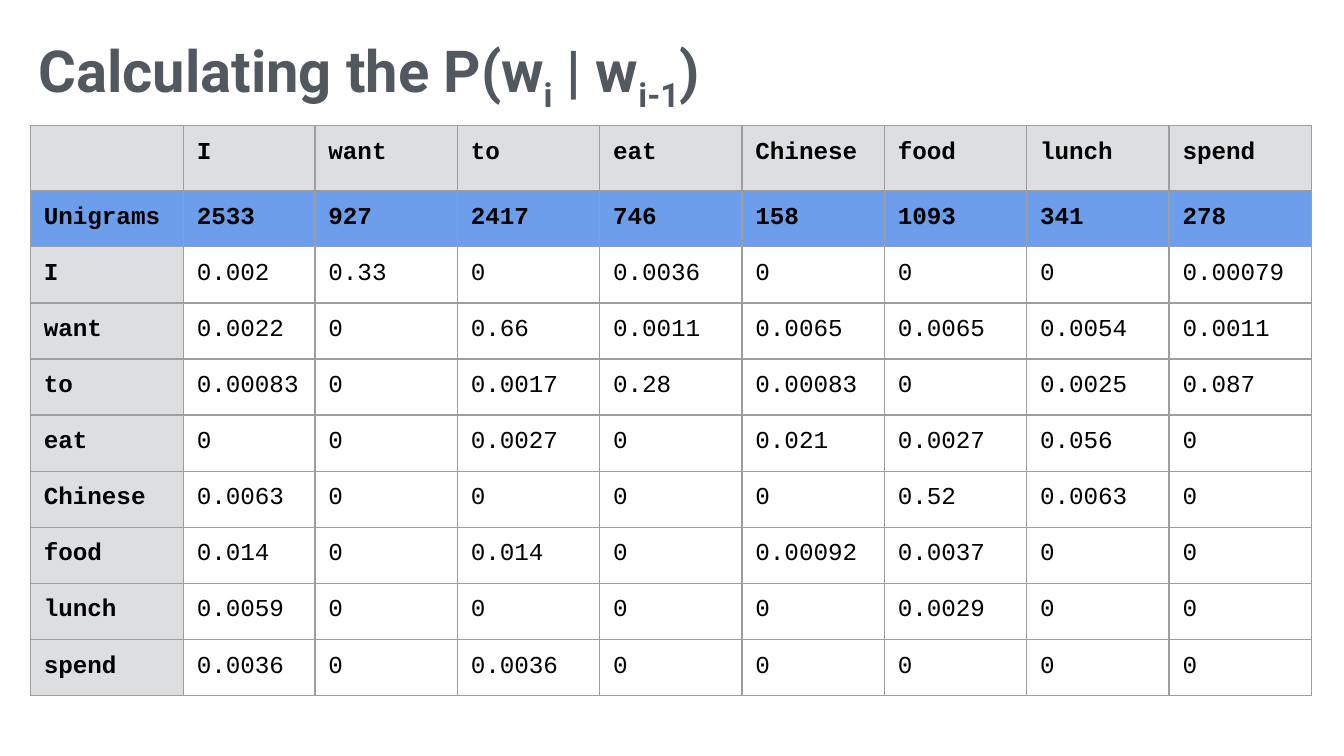
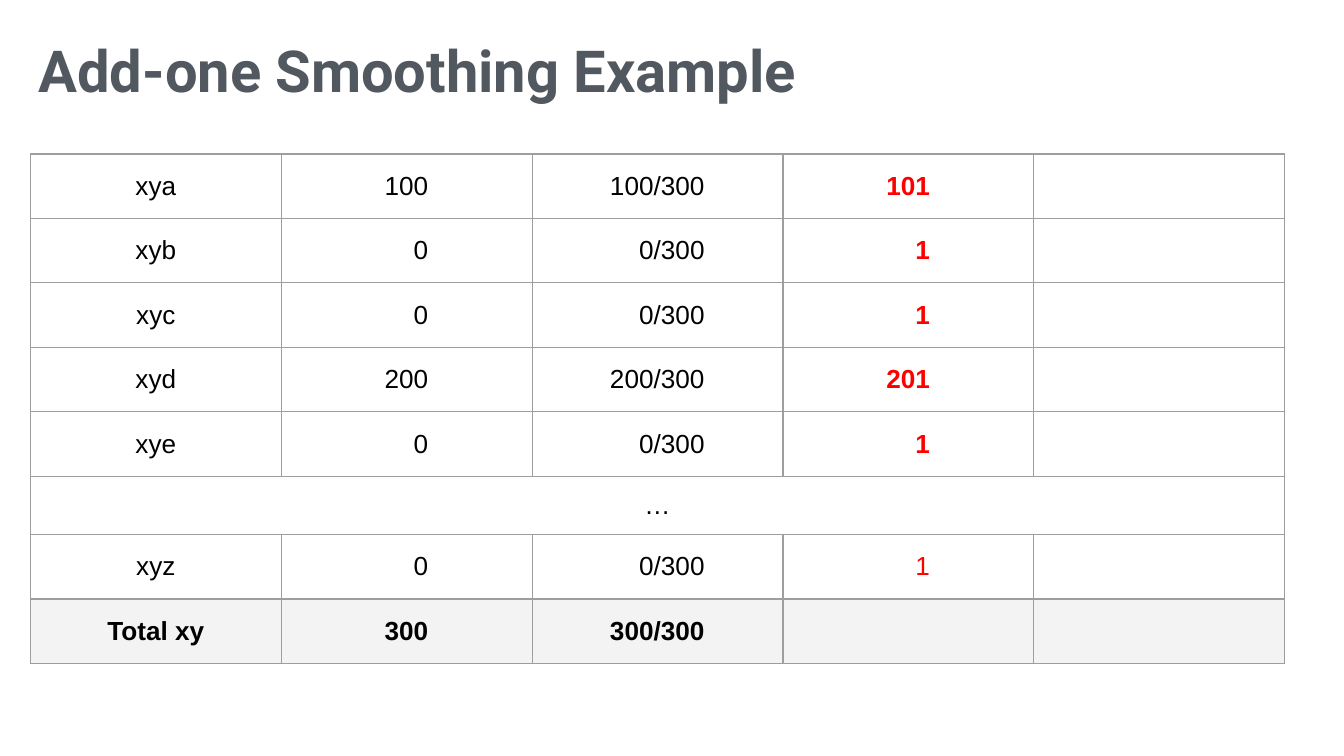
from lxml.etree import SubElement
from pptx import Presentation
from pptx.dml.color import RGBColor
from pptx.enum.text import MSO_ANCHOR, PP_ALIGN
from pptx.oxml.ns import qn
from pptx.util import Pt

SLATE, BLACK, RED = "525860", "000000", "FF0000"
GRAY, BLUE, PALE, RULE = "DCDEE0", "6D9EEB", "F3F3F3", "9E9E9E"
LEFT = 16.3
PAD = 7.2

WORDS = ["I", "want", "to", "eat", "Chinese", "food", "lunch", "spend"]
COUNTS = ["2533", "927", "2417", "746", "158", "1093", "341", "278"]
PROBS = [
    ["0.002", "0.33", "0", "0.0036", "0", "0", "0", "0.00079"],
    ["0.0022", "0", "0.66", "0.0011", "0.0065", "0.0065", "0.0054", "0.0011"],
    ["0.00083", "0", "0.0017", "0.28", "0.00083", "0", "0.0025", "0.087"],
    ["0", "0", "0.0027", "0", "0.021", "0.0027", "0.056", "0"],
    ["0.0063", "0", "0", "0", "0", "0.52", "0.0063", "0"],
    ["0.014", "0", "0.014", "0", "0.00092", "0.0037", "0", "0"],
    ["0.0059", "0", "0", "0", "0", "0.0029", "0", "0"],
    ["0.0036", "0", "0.0036", "0", "0", "0", "0", "0"],
]
SMOOTH = [
    ["xya", "100", "100/300", "101", ""],
    ["xyb", "0", "0/300", "1", ""],
    ["xyc", "0", "0/300", "1", ""],
    ["xyd", "200", "200/300", "201", ""],
    ["xye", "0", "0/300", "1", ""],
    ["…", "", "", "", ""],
    ["xyz", "0", "0/300", "1", ""],
    ["Total xy", "300", "300/300", "", ""],
]
GAP, LAST, TOTAL = 5, 6, 7
RIGHT = {1: 55.7, 2: 42, 3: 55.7}


def paint(color, code):
    color.rgb = RGBColor.from_string(code)


def style(run, face, size, code, bold):
    run.font.name = face
    run.font.size = Pt(size)
    run.font.bold = bold
    paint(run.font.color, code)


def add_title(slide, parts):
    box = slide.shapes.add_textbox(Pt(LEFT), Pt(14.4), Pt(686), Pt(35.3))
    frame = box.text_frame
    frame.word_wrap = True
    frame.margin_left = frame.margin_right = Pt(4.3)
    frame.margin_top = frame.margin_bottom = Pt(4.3)
    for text, low in parts:
        run = frame.paragraphs[0].add_run()
        run.text = text
        style(run, "Roboto", 31, SLATE, True)
        if low:
            run.font._element.set("baseline", "-25000")


def add_grid(slide, top, widths, heights):
    shape = slide.shapes.add_table(
        len(heights), len(widths), Pt(LEFT), Pt(top),
        Pt(sum(widths)), Pt(sum(heights)))
    table = shape.table
    table.first_row = table.horz_banding = False
    for col, width in zip(table.columns, widths):
        col.width = Pt(width)
    for row, height in zip(table.rows, heights):
        row.height = Pt(height)
    return table


def add_rules(cell):
    props = cell._tc.get_or_add_tcPr()
    for side in ("lnL", "lnR", "lnT", "lnB"):
        line = SubElement(props, qn("a:" + side), w=str(Pt(0.75)))
        fill = SubElement(line, qn("a:solidFill"))
        SubElement(fill, qn("a:srgbClr"), val=RULE)


def fill_cell(cell, text, face, size, code=BLACK, bold=False, fill=None):
    cell.margin_left = cell.margin_right = Pt(PAD)
    cell.margin_top = cell.margin_bottom = Pt(PAD)
    add_rules(cell)
    if fill:
        cell.fill.solid()
        paint(cell.fill.fore_color, fill)
    else:
        cell.fill.background()
    para = cell.text_frame.paragraphs[0]
    if text:
        para.text = text
        style(para.runs[0], face, size, code, bold)
    else:
        SubElement(para._p, qn("a:endParaRPr"), sz=str(size * 100))


def add_probs(slide):
    rows = [[""] + WORDS, ["Unigrams"] + COUNTS]
    rows += [[word] + probs for word, probs in zip(WORDS, PROBS)]
    table = add_grid(slide, 67.4, [82, 70.5] + [76.28] * 7,
                     [34.8, 28.9] + [29.92] * len(WORDS))
    for r, row in enumerate(rows):
        for c, text in enumerate(row):
            head = r < 2 or c == 0
            fill = BLUE if r == 1 else GRAY if head else None
            fill_cell(table.cell(r, c), text, "Courier New", 13,
                      bold=head, fill=fill)


def add_smooth(slide):
    heights = [30 if r == GAP else 34.55 for r in range(len(SMOOTH))]
    table = add_grid(slide, 82.5, [134.4] * 5, heights)
    for r, row in enumerate(SMOOTH):
        for c, text in enumerate(row):
            cell = table.cell(r, c)
            red = c == 3
            fill_cell(cell, text, "Arial", 14, RED if red else BLACK,
                      r == TOTAL or red and r != LAST,
                      PALE if r == TOTAL else None)
            cell.vertical_anchor = MSO_ANCHOR.MIDDLE
            para = cell.text_frame.paragraphs[0]
            if c in RIGHT and r != GAP:
                para.alignment = PP_ALIGN.RIGHT
                cell.margin_right = Pt(RIGHT[c])
            else:
                para.alignment = PP_ALIGN.CENTER
    table.cell(GAP, 0).merge(table.cell(GAP, 4))


def main():
    deck = Presentation()
    deck.slide_width, deck.slide_height = Pt(720), Pt(405)
    blank = deck.slide_layouts[6]

    slide = deck.slides.add_slide(blank)
    add_title(slide, [("Calculating the P(w", False), ("i", True),
                      (" | w", False), ("i-1", True), (")", False)])
    add_probs(slide)

    slide = deck.slides.add_slide(blank)
    add_title(slide, [("Add-one Smoothing Example", False)])
    add_smooth(slide)

    deck.save("out.pptx")


if __name__ == "__main__":
    main()
